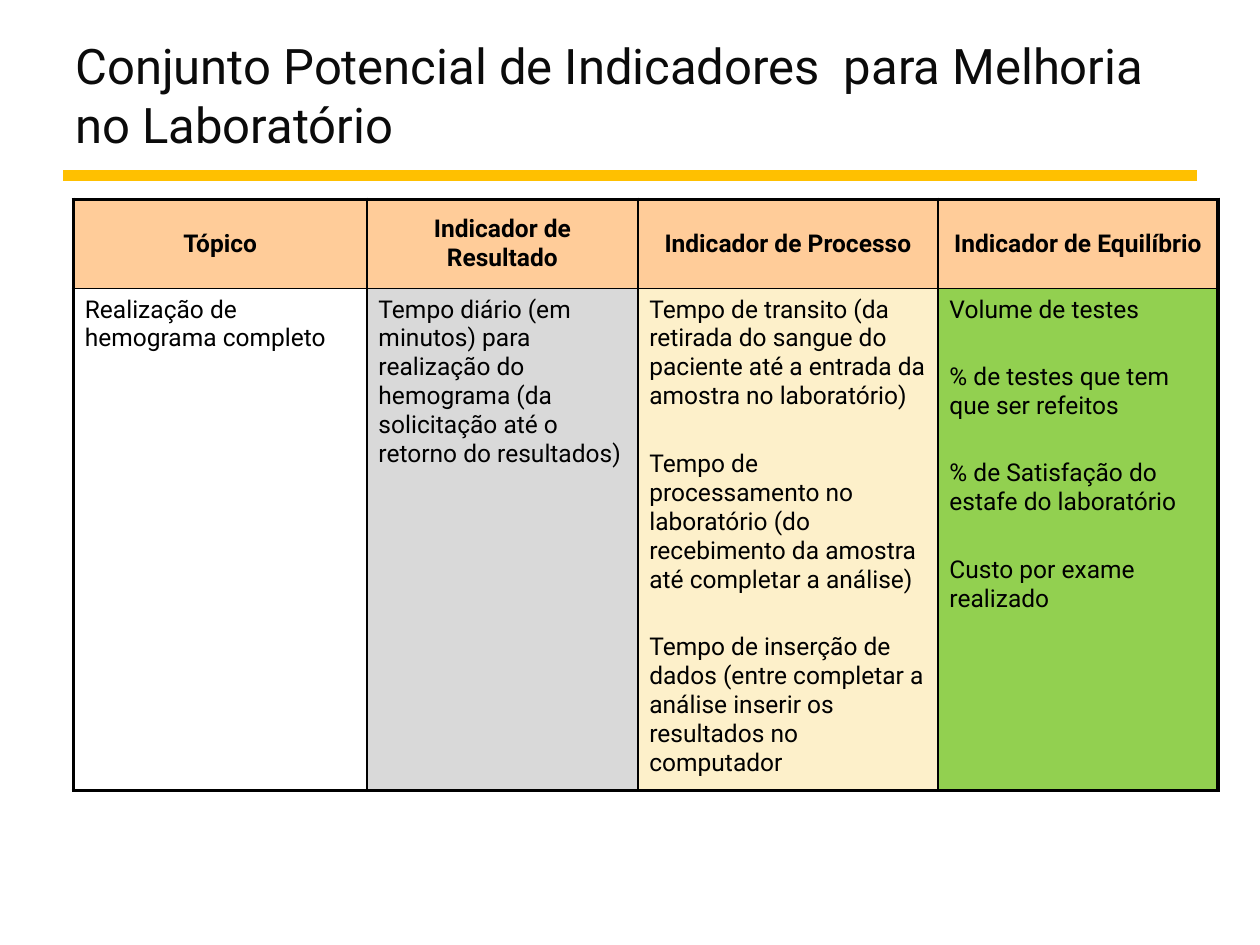
import pptx
import pptx.dml.color
import pptx.enum.shapes
import pptx.enum.text
import pptx.oxml
import pptx.oxml.ns
import pptx.util
from pptx.util import Cm, Pt

RGBColor = pptx.dml.color.RGBColor
PP_ALIGN = pptx.enum.text.PP_ALIGN
MSO_ANCHOR = pptx.enum.text.MSO_ANCHOR

BLACK = RGBColor(0x00, 0x00, 0x00)
TITLE_INK = RGBColor(0x0B, 0x0B, 0x0B)
AMBER = RGBColor(0xFF, 0xC0, 0x00)
PEACH = RGBColor(0xFF, 0xCC, 0x99)
WHITE = RGBColor(0xFF, 0xFF, 0xFF)
GREY = RGBColor(0xD9, 0xD9, 0xD9)
CREAM = RGBColor(0xFD, 0xF0, 0xCA)
GREEN = RGBColor(0x92, 0xD0, 0x50)

FONT = "Roboto"
OUTER, INNER = Pt(2.25), Pt(1)

# heading, column width in cm, body fill, body paragraphs
COLUMNS = [
    ("Tópico", 5.92, WHITE, ["Realização de hemograma completo"]),
    ("Indicador de Resultado", 5.46, GREY, [
        "Tempo diário (em minutos) para realização do hemograma "
        "(da solicitação até o retorno do resultados)"]),
    ("Indicador de Processo", 6.05, CREAM, [
        "Tempo de transito (da retirada do sangue do paciente até a entrada "
        "da amostra no laboratório)",
        "Tempo de processamento no laboratório (do recebimento da amostra "
        "até completar a análise)",
        "Tempo de inserção de dados (entre completar a análise inserir os "
        "resultados no computador"]),
    ("Indicador de Equilíbrio", 5.64, GREEN, [
        "Volume de testes",
        "% de testes que tem que ser refeitos",
        "% de Satisfação do estafe do laboratório",
        "Custo por exame realizado"]),
]
ROW_HEIGHTS = [Cm(1.8), Cm(10.06)]


def style_font(font, size, color, bold=False):
    font.name = FONT
    font.size = Pt(size)
    font.bold = bold
    font.color.rgb = color


def add_title(slide, left, top, width, height):
    """Title text with the amber rule beneath it."""
    tf = slide.shapes.add_textbox(left, top, width, height).text_frame
    tf.word_wrap = True
    tf.vertical_anchor = MSO_ANCHOR.MIDDLE
    tf.text = "Conjunto Potencial de Indicadores  para Melhoria no Laboratório"
    style_font(tf.paragraphs[0].runs[0].font, 28, TITLE_INK)

    y = top + height + Cm(0.36)
    rule = slide.shapes.add_connector(
        pptx.enum.shapes.MSO_CONNECTOR.STRAIGHT, left, y, left + width, y)
    rule.line.color.rgb = AMBER
    rule.line.width = Pt(6)
    rule._element.spPr.append(pptx.oxml.parse_xml(
        f'<a:effectLst {pptx.oxml.ns.nsdecls("a")}/>'))


def set_borders(cell, **widths):
    """Draw black borders; call before filling, as lines precede the fill."""
    tcPr = cell._tc.get_or_add_tcPr()
    for side in "LRTB":
        tcPr.append(pptx.oxml.parse_xml(
            f'<a:ln{side} {pptx.oxml.ns.nsdecls("a")} w="{int(widths[side])}">'
            f'<a:solidFill><a:srgbClr val="{BLACK}"/></a:solidFill></a:ln{side}>'))


def fill_cell(cell, paragraphs, color, heading):
    cell.margin_left = cell.margin_right = Cm(0.23)
    cell.margin_top = cell.margin_bottom = Cm(0.13)
    cell.vertical_anchor = MSO_ANCHOR.MIDDLE if heading else MSO_ANCHOR.TOP
    cell.fill.solid()
    cell.fill.fore_color.rgb = color
    tf = cell.text_frame
    tf.text = "\n".join(paragraphs)
    for i, p in enumerate(tf.paragraphs):
        p.alignment = PP_ALIGN.CENTER if heading else PP_ALIGN.LEFT
        if i:
            p.space_before = Pt(22)
        style_font(p.runs[0].font, 14, BLACK, heading)


def add_indicator_table(slide, left, top):
    width = Cm(sum(column[1] for column in COLUMNS))
    table = slide.shapes.add_table(
        2, len(COLUMNS), left, top, width, sum(ROW_HEIGHTS)).table
    table.first_row = table.horz_banding = False
    for row, height in zip(table.rows, ROW_HEIGHTS):
        row.height = height

    last = len(COLUMNS) - 1
    for c, (heading, col_width, color, body) in enumerate(COLUMNS):
        table.columns[c].width = Cm(col_width)
        for r, (texts, fill) in enumerate([([heading], PEACH), (body, color)]):
            cell = table.cell(r, c)
            set_borders(cell,
                        L=OUTER if c == 0 else INNER,
                        R=OUTER if c == last else INNER,
                        T=OUTER if r == 0 else INNER,
                        B=OUTER if r == 1 else INNER)
            fill_cell(cell, texts, fill, heading=r == 0)


def main():
    prs = pptx.Presentation()
    prs.slide_width, prs.slide_height = Cm(25.4), Cm(19.05)
    slide = prs.slides.add_slide(prs.slide_layouts[6])
    add_title(slide, Cm(1.27), Cm(0.64), Cm(22.86), Cm(2.54))
    add_indicator_table(slide, Cm(1.48), Cm(4.02))
    prs.save("out.pptx")


if __name__ == "__main__":
    main()
